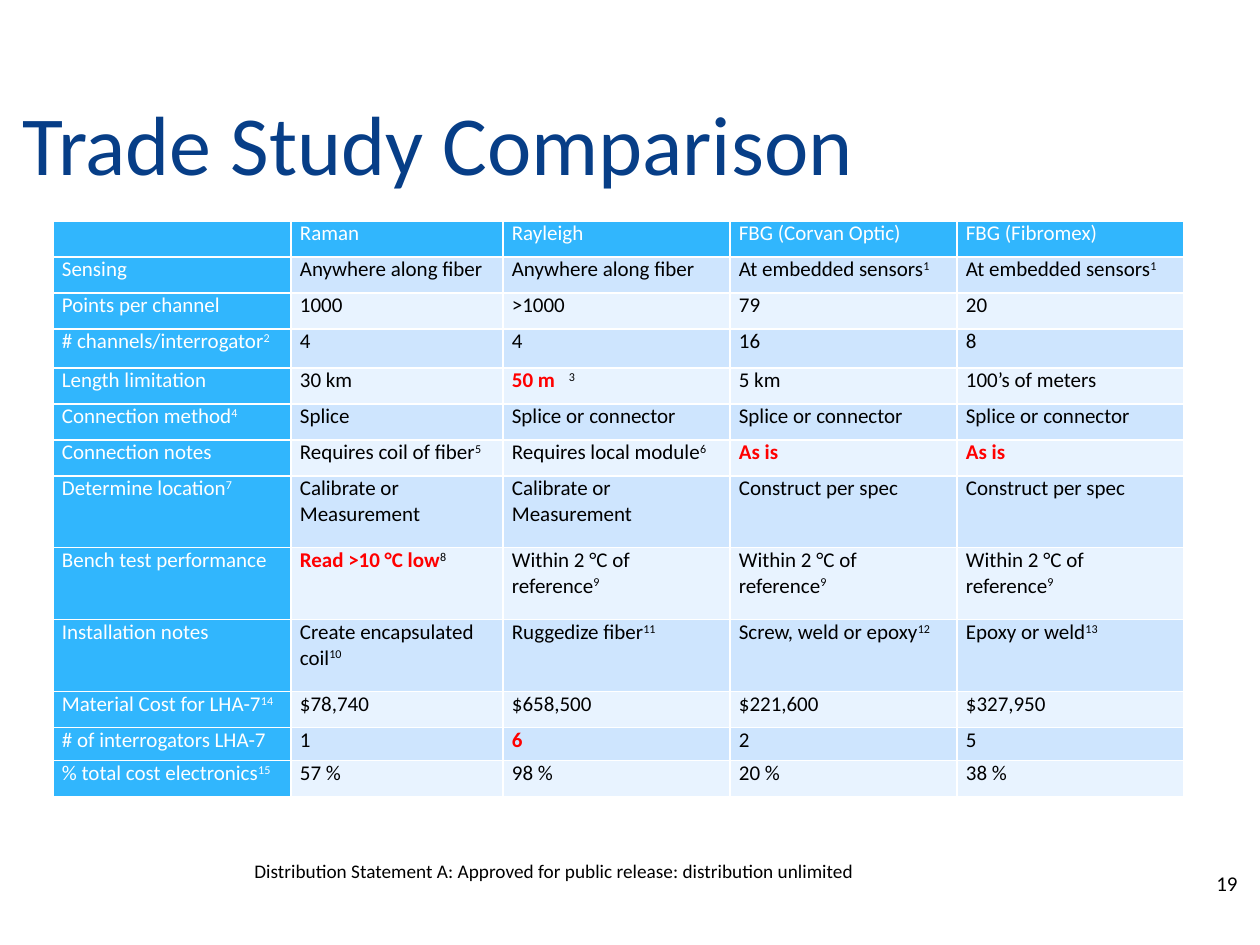
from dataclasses import dataclass

from pptx import Presentation
from pptx.dml.color import RGBColor
from pptx.enum.text import MSO_ANCHOR, PP_ALIGN
from pptx.oxml.ns import qn
from pptx.util import Emu, Pt
from lxml import etree

LEFT, RIGHT, JUSTIFY = PP_ALIGN.LEFT, PP_ALIGN.RIGHT, PP_ALIGN.JUSTIFY
TOP, MIDDLE = MSO_ANCHOR.TOP, MSO_ANCHOR.MIDDLE
EMU_PER_PX = 914400 / 126


@dataclass(frozen=True)
class Theme:
    font: str = "Calibri"
    title: str = "073E87"
    header: str = "31B6FD"
    bands: tuple = ("CEE5FE", "E8F3FF")
    light: str = "FFFFFF"
    ink: str = "000000"
    alert: str = "FF0000"
    title_size: int = 48
    body_size: int = 12
    footer_size: int = 11
    border: int = 1


THEME = Theme()
COLUMNS = [238, 212, 227, 227, 227]
ROW_HEIGHTS = [36, 36, 36, 39, 36, 36, 36, 72, 72, 72, 36, 33, 36]
CELL_INSET = 9
FOOTNOTE_TAB = 57

# "^" starts a superscript note and a leading "!" marks an alert value.
COMPARISON = [
    ["", "Raman", "Rayleigh", "FBG (Corvan Optic)", "FBG (Fibromex)"],
    ["Sensing", "Anywhere along fiber", "Anywhere along fiber",
     "At embedded sensors^1", "At embedded sensors^1"],
    ["Points per channel", "1000", ">1000", "79", "20"],
    ["# channels/interrogator^2", "4", "4", "16", "8"],
    ["Length limitation", "30 km", "!50 m\t^3", "5 km", "100’s of meters"],
    ["Connection method^4", "Splice", "Splice or connector",
     "Splice or connector", "Splice or connector"],
    ["Connection notes", "Requires coil of fiber^5",
     "Requires local module^6", "!As is", "!As is"],
    ["Determine location^7", "Calibrate or Measurement",
     "Calibrate or Measurement", "Construct per spec", "Construct per spec"],
    ["Bench test performance", "!Read >10 °C low^8",
     "Within 2 °C of reference^9", "Within 2 °C of reference^9",
     "Within 2 °C of reference^9"],
    ["Installation notes", "Create encapsulated coil^10",
     "Ruggedize fiber^11", "Screw, weld or epoxy^12", "Epoxy or weld^13"],
    ["Material Cost for LHA-7^14", "$78,740", "$658,500", "$221,600",
     "$327,950"],
    ["# of interrogators LHA-7", "1", "!6", "2", "5"],
    ["% total cost electronics^15", "57 %", "98 %", "20 %", "38 %"],
]


def px(length):
    return Emu(round(length * EMU_PER_PX))


def apply_format(target, values):
    for name, value in values.items():
        setattr(target, name, value)


def add_run(paragraph, text, size, color, bold=False):
    run = paragraph.add_run()
    run.text = text
    apply_format(run.font, {"name": THEME.font, "size": Pt(size), "bold": bold})
    run.font.color.rgb = RGBColor.from_string(color)
    return run


def add_label(slide, box, text, size, color, align=LEFT, anchor=TOP):
    frame = slide.shapes.add_textbox(*map(px, box)).text_frame
    apply_format(frame, {"word_wrap": True, "vertical_anchor": anchor})
    paragraph = frame.paragraphs[0]
    paragraph.alignment = align
    add_run(paragraph, text, size, color)


def add_borders(cell):
    properties = cell._tc.get_or_add_tcPr()
    for index, side in enumerate(("a:lnL", "a:lnR", "a:lnT", "a:lnB")):
        line = etree.Element(qn(side), w=str(Pt(THEME.border)))
        solid = etree.SubElement(line, qn("a:solidFill"))
        etree.SubElement(solid, qn("a:srgbClr"), val=THEME.light)
        properties.insert(index, line)


def add_tab_stop(paragraph, position):
    stops = etree.SubElement(paragraph._p.get_or_add_pPr(), qn("a:tabLst"))
    etree.SubElement(stops, qn("a:tab"), pos=str(px(position)), algn="l")


def fill_cell(cell, content, fill, color, align):
    apply_format(cell, {"margin_left": px(CELL_INSET),
                        "margin_right": px(CELL_INSET),
                        "margin_top": 0, "margin_bottom": 0,
                        "vertical_anchor": TOP})
    cell.fill.solid()
    cell.fill.fore_color.rgb = RGBColor.from_string(fill)
    add_borders(cell)
    paragraph = cell.text_frame.paragraphs[0]
    paragraph.alignment = align
    if "\t" in content:
        add_tab_stop(paragraph, FOOTNOTE_TAB)
    alert = content.startswith("!")
    value, _, note = content.removeprefix("!").partition("^")
    if value:
        add_run(paragraph, value, THEME.body_size,
                THEME.alert if alert else color, alert)
    if note:
        note_run = add_run(paragraph, note, THEME.body_size, color)
        note_run.font._element.set("baseline", "30000")
    etree.SubElement(paragraph._p, qn("a:endParaRPr"),
                     sz=str(THEME.body_size * 100))


def add_comparison(slide, left, top):
    box = (left, top, sum(COLUMNS), sum(ROW_HEIGHTS))
    table = slide.shapes.add_table(
        len(COMPARISON), len(COLUMNS), *map(px, box)).table
    apply_format(table, {"first_row": False, "horz_banding": False})
    for column, width in zip(table.columns, COLUMNS):
        column.width = px(width)
    for row, height in zip(table.rows, ROW_HEIGHTS):
        row.height = px(height)
    for r, contents in enumerate(COMPARISON):
        for c, content in enumerate(contents):
            heading = r == 0 or c == 0
            fill = THEME.header if heading else THEME.bands[(r - 1) % 2]
            color = THEME.light if heading else THEME.ink
            align = JUSTIFY if c == 0 else LEFT
            fill_cell(table.cell(r, c), content, fill, color, align)


def add_footer(slide, left, top):
    add_label(slide, (left, top, 630, 37),
              "Distribution Statement A: Approved for public release: "
              "distribution unlimited", THEME.footer_size, THEME.ink)
    add_label(slide, (left + 913, top + 5, 95, 50), "19",
              THEME.body_size, THEME.ink, RIGHT, MIDDLE)


def main():
    deck = Presentation()
    apply_format(deck, {"slide_width": px(1260), "slide_height": px(945)})
    slide = deck.slides.add_slide(deck.slide_layouts[6])
    add_label(slide, (10, 105, 1134, 73), "Trade Study Comparison",
              THEME.title_size, THEME.title, anchor=MIDDLE)
    add_comparison(slide, 53, 221)
    add_footer(slide, 242, 853)
    deck.save("out.pptx")


if __name__ == "__main__":
    main()
